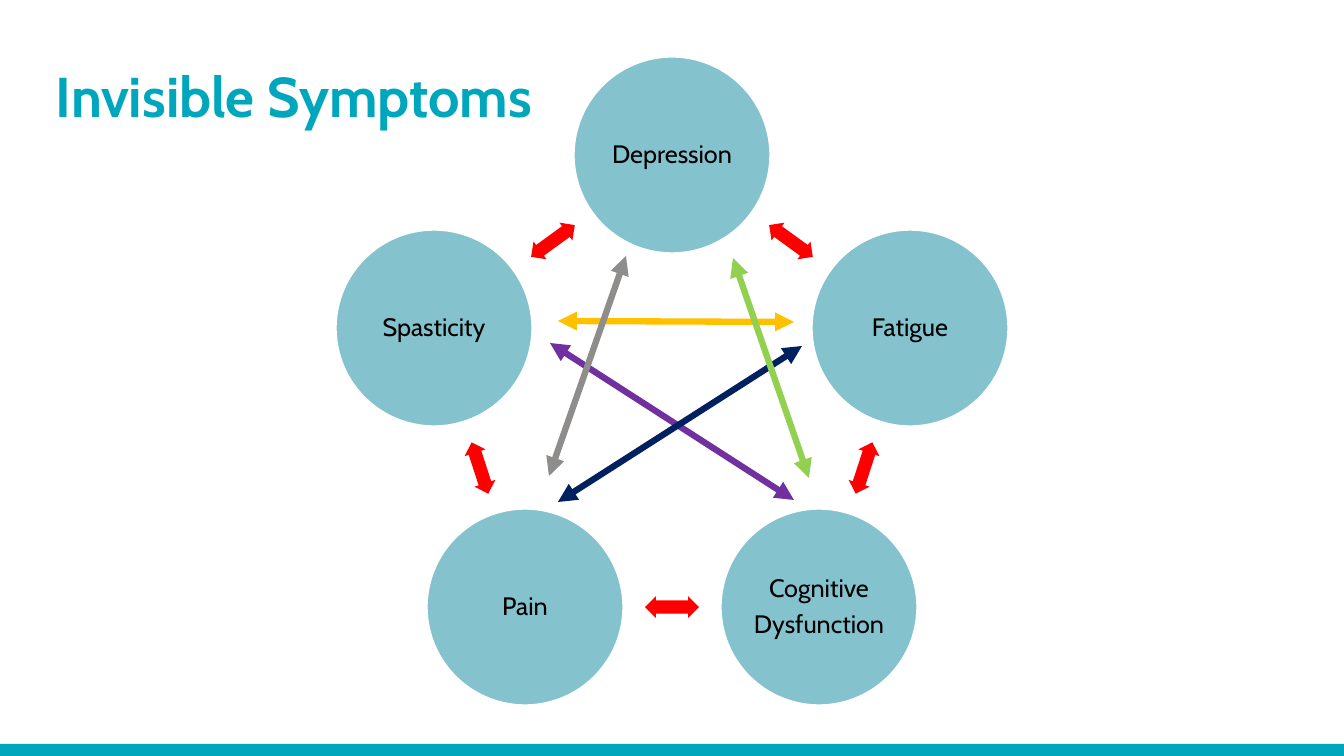
from dataclasses import dataclass
from math import cos, radians, sin

from lxml.etree import SubElement
from pptx import Presentation
from pptx.dml.color import RGBColor
from pptx.enum.shapes import MSO_CONNECTOR, MSO_SHAPE
from pptx.enum.text import MSO_ANCHOR, PP_ALIGN
from pptx.oxml.ns import qn
from pptx.shapes.autoshape import Shape
from pptx.slide import Slide
from pptx.text.text import TextFrame
from pptx.util import Emu, Pt

SLIDE_WIDTH, SLIDE_HEIGHT = 1344, 756
EMU_PER_PX = 12192000 / SLIDE_WIDTH


@dataclass(frozen=True)
class Theme:
    font: str = "Cabin"
    title_size: float = 40
    label_size: float = 18
    label_gap: float = 6.3
    link_width: float = 4.5
    teal: str = "00A7BC"
    circle: str = "84C3CE"
    outline: str = "FFFFFF"
    label: str = "000000"
    arrow: str = "FF0000"


@dataclass(frozen=True)
class Ring:
    """A regular pentagon of circles, clockwise from the top."""
    center_x: int = 672
    center_y: int = 405
    radius: int = 250
    diameter: int = 196
    step: int = 72

    def point(self, angle: float, radius: float) -> tuple[int, int]:
        turn = radians(angle)
        return (round(self.center_x + radius * sin(turn)),
                round(self.center_y - radius * cos(turn)))


@dataclass(frozen=True)
class Link:
    start: tuple[int, int]
    end: tuple[int, int]
    color: str


THEME = Theme()
RING = Ring()
ARROW_WIDTH, ARROW_HEIGHT = 54, 22
SYMPTOMS = ["Depression", "Fatigue", "Cognitive\nDysfunction", "Pain", "Spasticity"]
LINKS = [
    Link((794, 322), (558, 321), "FFC000"),
    Link((794, 500), (550, 343), "7030A0"),
    Link((802, 346), (558, 502), "002060"),
    Link((626, 256), (549, 476), "8E8D8C"),
    Link((733, 258), (809, 478), "92D050"),
]


def px(length: float) -> Emu:
    return Emu(round(length * EMU_PER_PX))


def write(frame: TextFrame, text: str, *, size: float, color: str, bold: bool = False,
          align: PP_ALIGN = PP_ALIGN.LEFT, space_after: float = 0) -> None:
    """Fill a frame with one paragraph for each line of text."""
    for index, line in enumerate(text.split("\n")):
        para = frame.add_paragraph() if index else frame.paragraphs[0]
        para.alignment = align
        para.line_spacing = 0.9
        para.space_after = Pt(space_after)
        span = para.add_run()
        span.text = line
        span.font.name = THEME.font
        span.font.size = Pt(size)
        span.font.bold = bold
        span.font.color.rgb = RGBColor.from_string(color)


def add_filled(page: Slide, kind: MSO_SHAPE, left: float, top: float,
               width: float, height: float, color: str) -> Shape:
    shape = page.shapes.add_shape(kind, px(left), px(top), px(width), px(height))
    shape.shadow.inherit = False
    shape.fill.solid()
    shape.fill.fore_color.rgb = RGBColor.from_string(color)
    shape.line.fill.background()
    return shape


def add_symptom(page: Slide, text: str, angle: float) -> None:
    x, y = RING.point(angle, RING.radius)
    size = RING.diameter
    circle = add_filled(page, MSO_SHAPE.OVAL, x - size / 2, y - size / 2,
                        size, size, THEME.circle)
    circle.line.color.rgb = RGBColor.from_string(THEME.outline)
    circle.line.width = Pt(1)
    frame = circle.text_frame
    frame.word_wrap = False
    frame.vertical_anchor = MSO_ANCHOR.MIDDLE
    frame.margin_left = frame.margin_right = px(3)
    frame.margin_top = frame.margin_bottom = px(3)
    write(frame, text, size=THEME.label_size, color=THEME.label,
          align=PP_ALIGN.CENTER, space_after=THEME.label_gap)


def add_ring_arrow(page: Slide, angle: float) -> None:
    """Place a double arrow midway between two neighbouring circles."""
    x, y = RING.point(angle, RING.radius * cos(radians(RING.step / 2)))
    arrow = add_filled(page, MSO_SHAPE.LEFT_RIGHT_ARROW, x - ARROW_WIDTH / 2,
                       y - ARROW_HEIGHT / 2, ARROW_WIDTH, ARROW_HEIGHT, THEME.arrow)
    arrow.adjustments[0] = 0.6
    arrow.rotation = angle


def add_link(page: Slide, link: Link) -> None:
    connector = page.shapes.add_connector(
        MSO_CONNECTOR.STRAIGHT, *map(px, link.start), *map(px, link.end))
    connector.line.color.rgb = RGBColor.from_string(link.color)
    connector.line.width = Pt(THEME.link_width)
    outline = connector.line._get_or_add_ln()
    for end in ("a:headEnd", "a:tailEnd"):
        SubElement(outline, qn(end), type="triangle")
    SubElement(connector._element.spPr, qn("a:effectLst"))


def add_title(page: Slide, text: str) -> None:
    box = page.shapes.add_textbox(px(46), px(64), px(1159), px(146))
    box.text_frame.word_wrap = True
    write(box.text_frame, text, size=THEME.title_size, color=THEME.teal, bold=True)


def main() -> None:
    deck = Presentation()
    deck.slide_width, deck.slide_height = px(SLIDE_WIDTH), px(SLIDE_HEIGHT)
    page = deck.slides.add_slide(deck.slide_layouts[6])
    add_filled(page, MSO_SHAPE.RECTANGLE, 0, 744, SLIDE_WIDTH, 12, THEME.teal)
    for index, symptom in enumerate(SYMPTOMS):
        angle = index * RING.step
        add_symptom(page, symptom, angle)
        add_ring_arrow(page, angle + RING.step / 2)
    for link in LINKS:
        add_link(page, link)
    add_title(page, "Invisible Symptoms")
    deck.save("out.pptx")


if __name__ == "__main__":
    main()
